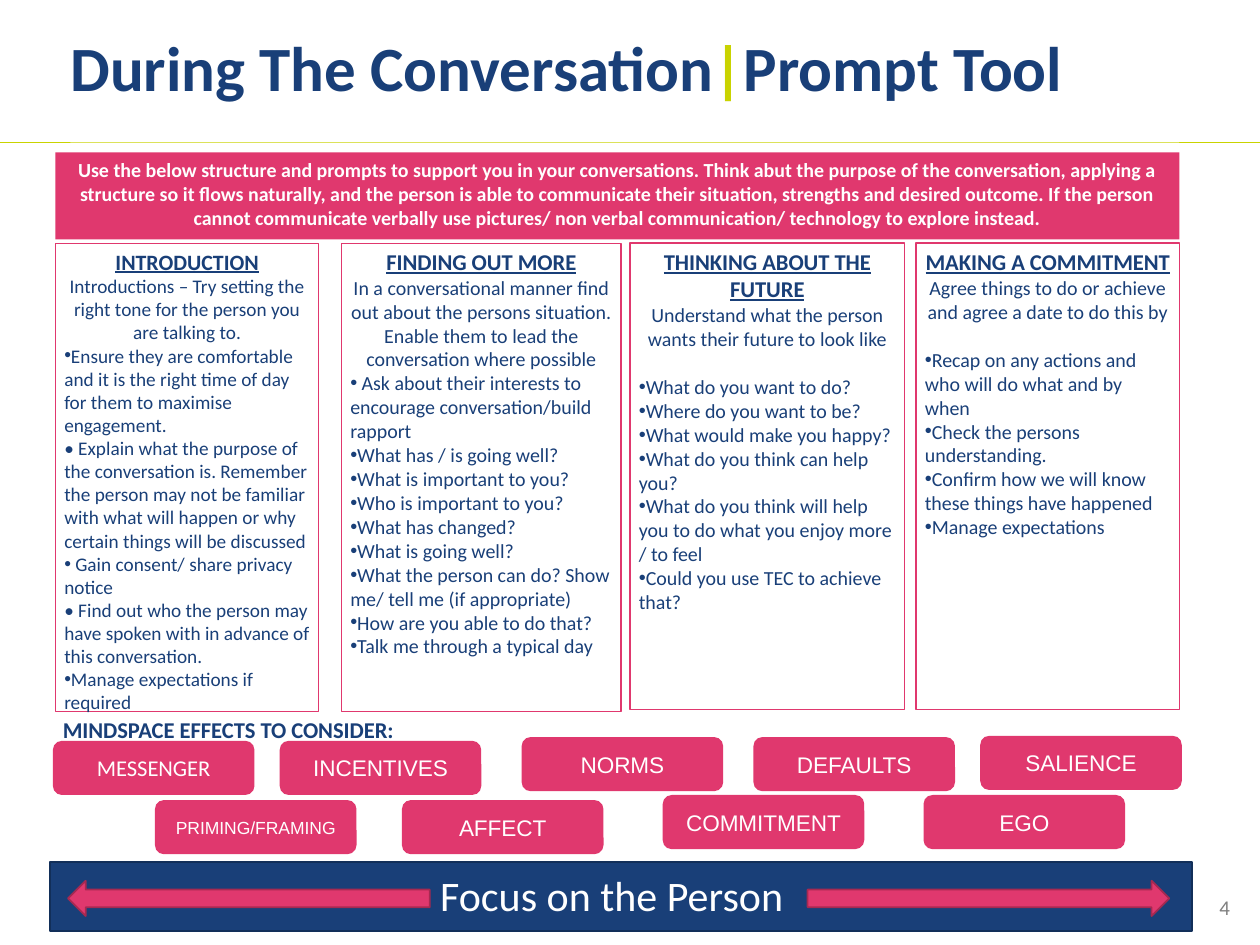
from dataclasses import dataclass

import pptx
import pptx.dml.color
import pptx.enum.shapes
import pptx.enum.text
import pptx.oxml.ns
import pptx.util
from lxml import etree

Inches = pptx.util.Inches
Pt = pptx.util.Pt
Shape = pptx.enum.shapes.MSO_SHAPE
Align = pptx.enum.text.PP_ALIGN
Anchor = pptx.enum.text.MSO_ANCHOR


@dataclass(frozen=True)
class Theme:
    navy: str = "193F78"
    navy_edge: str = "122F59"
    pink: str = "E0386E"
    pink_edge: str = "A62951"
    lime: str = "C9D300"
    white: str = "FFFFFF"
    grey: str = "808080"
    body_font: str = "Calibri"
    label_font: str = "Arial"
    title: float = 36
    focus: float = 24
    heading: float = 12.9
    body: float = 11.4
    number: float = 12
    small_label: float = 10


@dataclass(frozen=True)
class Column:
    left: float
    width: float
    height: float
    heading: str
    intro: str
    prompts: tuple[str, ...]
    heading_size: float = 12.9
    body_size: float = 11.4
    gap: float = 0


@dataclass(frozen=True)
class Effect:
    left: float
    top: float
    label: str
    font: str = "Arial"
    size: float = 12.9


T = Theme()
PADDING = (0.07, 0.04, 0.07, 0.04)
COLUMN_TOP = 1.93

COLUMNS = (
    Column(0.44, 2.09, 3.72, "INTRODUCTION",
           "Introductions – Try setting the right tone for the person you are talking to.",
           ("Ensure they are comfortable and it is the right time of day for them to maximise engagement.",
            "• Explain what the purpose of the conversation is. Remember the person may not be familiar "
            "with what will happen or why certain things will be discussed",
            " Gain consent/ share privacy notice",
            "• Find out who the person may have spoken with in advance of this conversation.",
            "Manage expectations if required"),
           heading_size=12.5, body_size=11),
    Column(2.71, 2.22, 3.72, "FINDING OUT MORE",
           "In a conversational manner find out about the persons situation. "
           "Enable them to lead the conversation where possible",
           (" Ask about their interests to encourage conversation/build rapport",
            "What has / is going well?",
            "What is important to you?",
            "Who is important to you?",
            "What has changed?",
            "What is going well?",
            "What the person can do? Show me/ tell me (if appropriate)",
            "How are you able to do that?",
            "Talk me through a typical day")),
    Column(5, 2.18, 3.7, "THINKING ABOUT THE FUTURE",
           "Understand what the person wants their future to look like",
           ("What do you want to do?",
            "Where do you want to be?",
            "What would make you happy?",
            "What do you think can help you?",
            "What do you think will help you to do what you enjoy more / to feel",
            "Could you use TEC to achieve that?"),
           gap=13.9),
    Column(7.27, 2.09, 3.7, "MAKING A COMMITMENT",
           "Agree things to do or achieve and agree a date to do this by",
           ("Recap on any actions and who will do what and by when",
            "Check the persons understanding.",
            "Confirm how we will know these things have happened",
            "Manage expectations"),
           gap=13.9),
)

EFFECTS = (
    Effect(0.42, 5.88, "MESSENGER", font=T.body_font),
    Effect(2.22, 5.88, "INCENTIVES"),
    Effect(4.14, 5.85, "NORMS"),
    Effect(5.98, 5.85, "DEFAULTS"),
    Effect(7.78, 5.84, "SALIENCE"),
    Effect(1.23, 6.35, "PRIMING/FRAMING", size=T.small_label),
    Effect(3.19, 6.35, "AFFECT"),
    Effect(5.26, 6.31, "COMMITMENT"),
    Effect(7.33, 6.31, "EGO"),
)


def rgb(color: str) -> pptx.dml.color.RGBColor:
    return pptx.dml.color.RGBColor.from_string(color)


def add_run(p, text: str, size: float, color: str, font: str = T.body_font,
            bold: bool = False, underline: bool = False) -> None:
    r = p.add_run()
    r.text = text
    r.font.name, r.font.size = font, Pt(size)
    r.font.bold, r.font.underline = bold, underline
    r.font.color.rgb = rgb(color)


def set_frame(sp, insets: tuple, anchor=Anchor.TOP, align=Align.CENTER):
    tf = sp.text_frame
    tf.word_wrap = True
    tf.vertical_anchor = anchor
    tf.margin_left, tf.margin_top, tf.margin_right, tf.margin_bottom = map(Inches, insets)
    p = tf.paragraphs[0]
    p.alignment = align
    return p


def add_box(s, kind, box: tuple, fill: str, line: str = "", width: float = 1):
    sp = s.shapes.add_shape(kind, *map(Inches, box))
    sp.shadow.inherit = False
    sp.fill.solid()
    sp.fill.fore_color.rgb = rgb(fill)
    if line:
        sp.line.color.rgb = rgb(line)
        sp.line.width = Pt(width)
    else:
        sp.line.fill.background()
    return sp


def add_label(s, box: tuple, text: str, size: float, color: str,
              align=Align.LEFT, bold: bool = False) -> None:
    sp = s.shapes.add_textbox(*map(Inches, box))
    add_run(set_frame(sp, (0.1, 0.05, 0.1, 0.05), align=align), text, size, color, bold=bold)


def set_bullet(p) -> None:
    pPr = p._p.get_or_add_pPr()
    pPr.set("marL", "0")
    pPr.set("indent", "0")
    etree.SubElement(pPr, pptx.oxml.ns.qn("a:buFont"), typeface="Arial")
    etree.SubElement(pPr, pptx.oxml.ns.qn("a:buChar"), char="•")


def add_column(s, col: Column) -> None:
    sp = add_box(s, Shape.RECTANGLE, (col.left, COLUMN_TOP, col.width, col.height), T.white, T.pink, 0.75)
    p = set_frame(sp, PADDING)
    add_run(p, col.heading, col.heading_size, T.navy, bold=True, underline=True)
    p = sp.text_frame.add_paragraph()
    p.alignment = Align.CENTER
    add_run(p, col.intro, col.body_size, T.navy)
    for i, prompt in enumerate(col.prompts):
        p = sp.text_frame.add_paragraph()
        p.alignment = Align.LEFT
        if i == 0 and col.gap:
            p.space_before = Pt(col.gap)
        if not prompt.startswith("•"):
            set_bullet(p)
        add_run(p, prompt, col.body_size, T.navy)


def add_effect(s, effect: Effect) -> None:
    sp = add_box(s, Shape.ROUNDED_RECTANGLE, (effect.left, effect.top, 1.6, 0.43), T.pink)
    add_run(set_frame(sp, PADDING, Anchor.MIDDLE), effect.label, effect.size, T.white, effect.font)


def add_header(s) -> None:
    rule = s.shapes.add_connector(pptx.enum.shapes.MSO_CONNECTOR.STRAIGHT,
                                  Inches(0), Inches(1.13), Inches(10), Inches(1.13))
    rule.line.color.rgb = rgb(T.lime)
    rule.line.width = Pt(0.5)
    etree.SubElement(rule._element.spPr, pptx.oxml.ns.qn("a:effectLst"))
    title = add_box(s, Shape.RECTANGLE, (0.56, 0, 8.8, 1.13), T.white)
    p = set_frame(title, (0, 0, 0, 0), Anchor.MIDDLE, Align.LEFT)
    p.line_spacing = 0.9
    for text, color in (("During The Conversation", T.navy), ("|", T.lime), ("Prompt Tool", T.navy)):
        add_run(p, text, T.title, color, bold=True)
    banner = add_box(s, Shape.RECTANGLE, (0.44, 1.21, 8.92, 0.69), T.pink)
    add_run(set_frame(banner, PADDING),
            "Use the below structure and prompts to support you in your conversations. Think abut the purpose "
            "of the conversation, applying a structure so it flows naturally, and the person is able to "
            "communicate their situation, strengths and desired outcome. If the person cannot communicate "
            "verbally use pictures/ non verbal communication/ technology to explore instead.",
            T.body, T.white, bold=True)


def add_focus_band(s) -> None:
    add_box(s, Shape.RECTANGLE, (0.4, 6.84, 9.06, 0.55), T.navy, T.navy_edge)
    add_label(s, (0.6, 6.85, 8.51, 0.5), "Focus on the Person", T.focus, T.white, Align.CENTER)
    for left, rotation in ((6.41, 0), (0.54, 180)):
        arrow = add_box(s, Shape.RIGHT_ARROW, (left, 6.99, 2.87, 0.28), T.pink, T.pink_edge)
        arrow.rotation = rotation


def main() -> None:
    prs = pptx.Presentation()
    prs.slide_width, prs.slide_height = Inches(10), Inches(7.5)
    s = prs.slides.add_slide(prs.slide_layouts[6])
    add_header(s)
    for col in COLUMNS:
        add_column(s, col)
    for effect in EFFECTS:
        add_effect(s, effect)
    add_label(s, (0.4, 5.63, 5.07, 0.31), "MINDSPACE EFFECTS TO CONSIDER:", T.heading, T.navy, bold=True)
    add_focus_band(s)
    add_label(s, (9.58, 7.05, 0.55, 0.3), "4", T.number, T.grey)
    prs.save("out.pptx")


if __name__ == "__main__":
    main()
